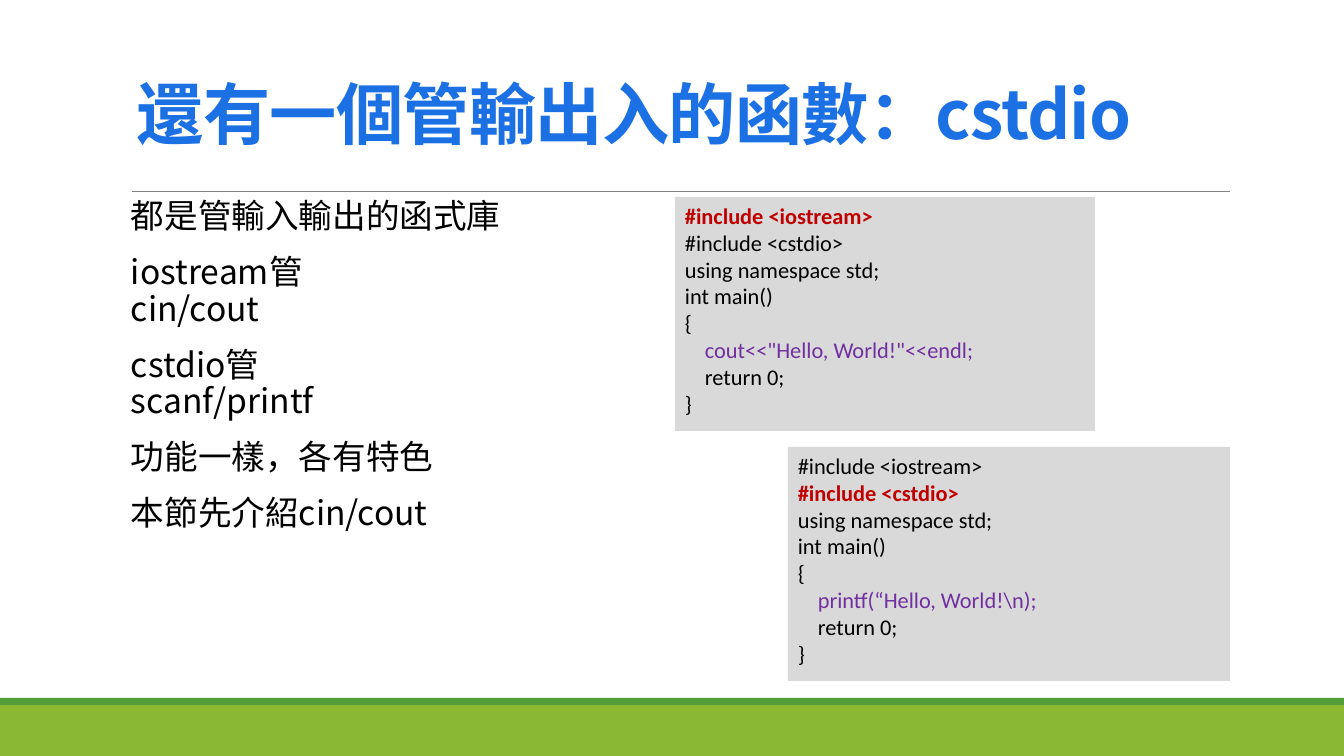
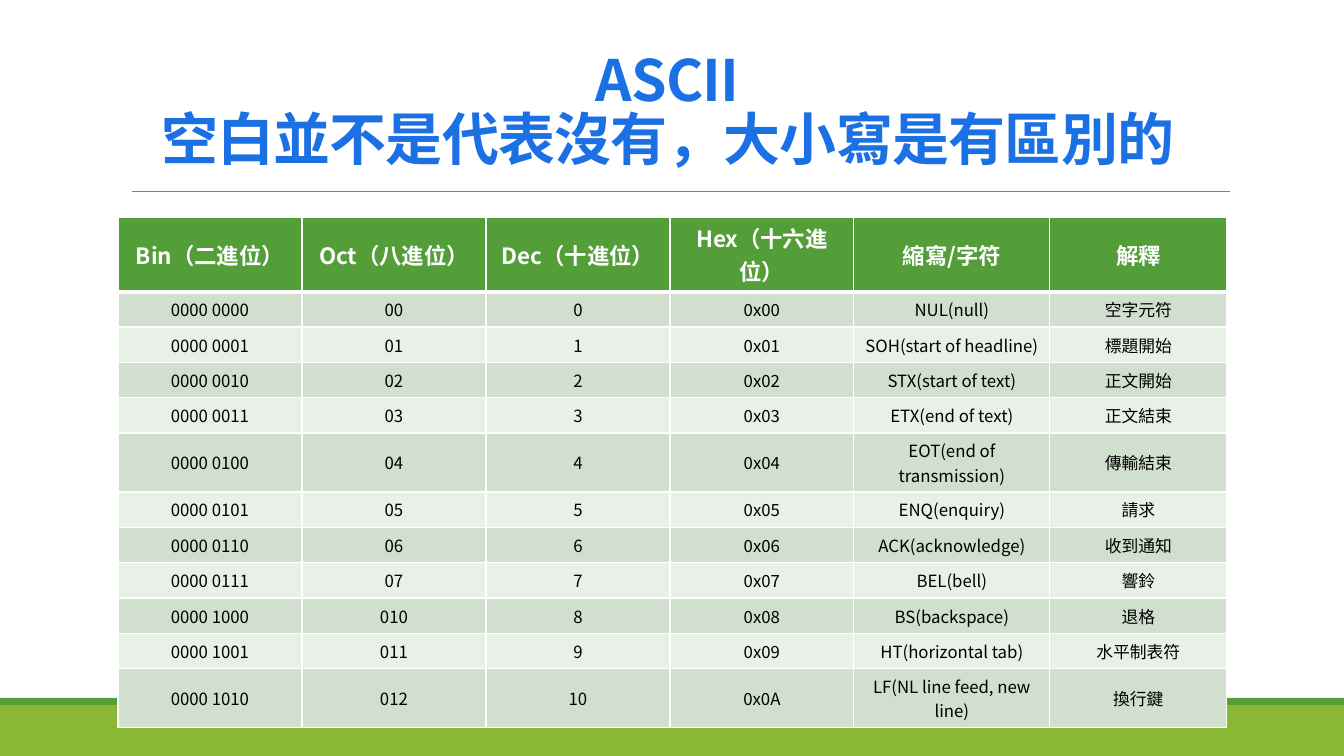
from dataclasses import dataclass, replace

from lxml import etree
from pptx import Presentation
from pptx.dml.color import RGBColor
from pptx.enum.shapes import MSO_CONNECTOR, MSO_SHAPE
from pptx.enum.text import MSO_ANCHOR as Anchor, PP_ALIGN as Align
from pptx.oxml.ns import qn
from pptx.util import Emu, Pt

SLIDE_W, SLIDE_H = 1344, 756
EMU_PER_PX = 12192000 / SLIDE_W

WHITE = RGBColor(0xFF, 0xFF, 0xFF)
BLACK = RGBColor(0x00, 0x00, 0x00)
BLUE = RGBColor(0x1B, 0x70, 0xE4)
GREEN = RGBColor(0x54, 0x9E, 0x39)
LIME = RGBColor(0x8A, 0xB8, 0x33)
RULE_GRAY = RGBColor(0x80, 0x80, 0x80)
CODE_GRAY = RGBColor(0xD9, 0xD9, 0xD9)
RED = RGBColor(0xC0, 0x00, 0x00)
PURPLE = RGBColor(0x70, 0x30, 0xA0)
ROW_DARK = RGBColor(0xD1, 0xDF, 0xCE)
ROW_LIGHT = RGBColor(0xE9, 0xF0, 0xE8)


@dataclass(frozen=True)
class TextStyle:
    font: str
    size: float
    color: RGBColor = BLACK
    bold: bool = False
    tracking: int = 0  # hundredths of a point


TITLE = TextStyle("Noto Sans CJK TC", 48, BLUE, True, -50)
BODY = TextStyle("Noto Sans CJK TC", 24)
CODE = TextStyle("Calibri", 16)
CODE_KEY = replace(CODE, color=RED, bold=True)
CODE_CALL = replace(CODE, color=PURPLE)
TABLE_HEAD = TextStyle("Noto Sans CJK SC", 16, WHITE, True)
TABLE_CELL = TextStyle("Noto Sans CJK SC", 12)

BODY_TEXT = [
    "都是管輸入輸出的函式庫",
    "iostream管\ncin/cout",
    "cstdio管\nscanf/printf",
    "功能一樣，各有特色",
    "本節先介紹cin/cout",
]

HEADINGS = ["Bin（二進位）", "Oct（八進位）", "Dec（十進位）",
            "Hex（十六進位）", "縮寫/字符", "解釋"]
COLUMN_WIDTHS = [184] * 4 + [196, 177]
CONTROL_CODES = [
    ("NUL(null)", "空字元符"),
    ("SOH(start of headline)", "標題開始"),
    ("STX(start of text)", "正文開始"),
    ("ETX(end of text)", "正文結束"),
    ("EOT(end of transmission)", "傳輸結束"),
    ("ENQ(enquiry)", "請求"),
    ("ACK(acknowledge)", "收到通知"),
    ("BEL(bell)", "響鈴"),
    ("BS(backspace)", "退格"),
    ("HT(horizontal tab)", "水平制表符"),
    ("LF(NL line feed, new line)", "換行鍵"),
]


def px(length):
    return Emu(round(length * EMU_PER_PX))


def add_text(paragraph, text, style):
    """Add one run per line of text, with line breaks between them."""
    for index, line in enumerate(text.split("\n")):
        if index:
            paragraph.add_line_break()
        run = paragraph.add_run()
        run.text = line
        font = run.font
        font.name, font.size, font.bold = style.font, Pt(style.size), style.bold
        font.color.rgb = style.color
        properties = font._element
        if style.tracking:
            properties.set("spc", str(style.tracking))
        east_asian = etree.Element(qn("a:ea"), typeface=style.font)
        properties.find(qn("a:latin")).addnext(east_asian)


def paragraphs(frame, count):
    for _ in range(count - 1):
        frame.add_paragraph()
    return frame.paragraphs


def add_rect(slide, left, top, width, height, color):
    rect = slide.shapes.add_shape(
        MSO_SHAPE.RECTANGLE, px(left), px(top), px(width), px(height))
    rect.shadow.inherit = False
    rect.fill.solid()
    rect.fill.fore_color.rgb = color
    rect.line.fill.background()
    return rect


def add_text_box(slide, left, top, width, height):
    box = slide.shapes.add_textbox(px(left), px(top), px(width), px(height))
    box.text_frame.word_wrap = True
    return box.text_frame


def add_title(slide, text, left, top, width, height,
              size=TITLE.size, align=Align.LEFT):
    frame = add_text_box(slide, left, top, width, height)
    frame.vertical_anchor = Anchor.BOTTOM
    title = frame.paragraphs[0]
    title.alignment = align
    title.line_spacing = Pt(round(size * 1.04))
    add_text(title, text, replace(TITLE, size=size))


def add_themed_slide(deck):
    """Blank slide with the footer bands and the rule under the title."""
    slide = deck.slides.add_slide(deck.slide_layouts[6])
    add_rect(slide, 0, 705, SLIDE_W, 51, LIME)
    add_rect(slide, 0, 698, SLIDE_W, 7, GREEN)
    rule = slide.shapes.add_connector(
        MSO_CONNECTOR.STRAIGHT, px(132), px(191), px(1230), px(191))
    rule.line.color.rgb = RULE_GRAY
    rule.line.width = Pt(0.5)
    etree.SubElement(rule._element.spPr, qn("a:effectLst"))
    return slide


def add_body(slide, texts):
    frame = add_text_box(slide, 121, 194, 657, 480)
    frame.margin_left, frame.margin_right = px(10), 0
    for paragraph, text in zip(paragraphs(frame, len(texts)), texts):
        paragraph.line_spacing = Pt(26)
        paragraph.space_before, paragraph.space_after = Pt(12), Pt(2)
        add_text(paragraph, text, BODY)


def add_code(slide, left, top, width, header, call):
    """Gray listing that highlights the header and the call it provides."""
    panel = add_rect(slide, left, top, width, 234, CODE_GRAY)
    frame = panel.text_frame
    frame.word_wrap = True
    frame.vertical_anchor = Anchor.TOP
    includes = [(f"#include <{name}>", CODE_KEY if name == header else CODE, 0)
                for name in ("iostream", "cstdio")]
    lines = includes + [
        ("using namespace std;", CODE, 0),
        ("int main()", CODE, 0),
        ("{", CODE, 0),
        (call, CODE_CALL, 20),
        ("return 0;", CODE, 20),
        ("}", CODE, 0),
    ]
    for paragraph, (text, style, indent) in zip(paragraphs(frame, len(lines)), lines):
        paragraph.alignment = Align.LEFT
        if indent:
            paragraph._p.get_or_add_pPr().set("marL", str(px(indent)))
        add_text(paragraph, text, style)


def set_borders(cell, bottom_width):
    properties = cell._tc.get_or_add_tcPr()
    for side, width in (("L", 1), ("R", 1), ("T", 1), ("B", bottom_width)):
        border = etree.SubElement(properties, qn(f"a:ln{side}"), w=str(Pt(width)))
        fill = etree.SubElement(border, qn("a:solidFill"))
        etree.SubElement(fill, qn("a:srgbClr"), val=str(WHITE))


def fill_row(row, texts, style, color, bottom_width=1):
    for cell, text in zip(row.cells, texts):
        set_borders(cell, bottom_width)
        cell.fill.solid()
        cell.fill.fore_color.rgb = color
        cell.vertical_anchor = Anchor.MIDDLE
        paragraph = cell.text_frame.paragraphs[0]
        paragraph.alignment = Align.CENTER
        add_text(paragraph, text, style)


def add_ascii_table(slide):
    row_height = px(389) // len(CONTROL_CODES)
    table = slide.shapes.add_table(
        len(CONTROL_CODES) + 1, len(HEADINGS),
        px(118), px(217), px(sum(COLUMN_WIDTHS)), px(457)).table
    for column, width in zip(table.columns, COLUMN_WIDTHS):
        column.width = px(width)
    for row in table.rows:
        row.height = row_height
    header, *code_rows = table.rows
    fill_row(header, HEADINGS, TABLE_HEAD, GREEN, bottom_width=3)
    for code, (row, (symbol, meaning)) in enumerate(zip(code_rows, CONTROL_CODES)):
        texts = [f"{code >> 4:04b} {code & 15:04b}", f"0{code:o}", str(code),
                 f"0x{code:02X}", symbol, meaning]
        fill_row(row, texts, TABLE_CELL, ROW_LIGHT if code % 2 else ROW_DARK)


def build_cstdio_slide(deck):
    slide = add_themed_slide(deck)
    add_title(slide, "還有一個管輸出入的函數：cstdio", 127, 60, 1109, 98)
    add_body(slide, BODY_TEXT)
    add_code(slide, 675, 197, 420, "iostream", 'cout<<"Hello, World!"<<endl;')
    add_code(slide, 788, 447, 442, "cstdio", "printf(“Hello, World!\\n);")


def build_ascii_slide(deck):
    slide = add_themed_slide(deck)
    add_ascii_table(slide)
    add_title(slide, "ASCII\n空白並不是代表沒有，大小寫是有區別的",
              118, 29, 1099, 148, size=40.7, align=Align.CENTER)


def main():
    deck = Presentation()
    deck.slide_width, deck.slide_height = px(SLIDE_W), px(SLIDE_H)
    build_cstdio_slide(deck)
    build_ascii_slide(deck)
    deck.save("out.pptx")


if __name__ == "__main__":
    main()
